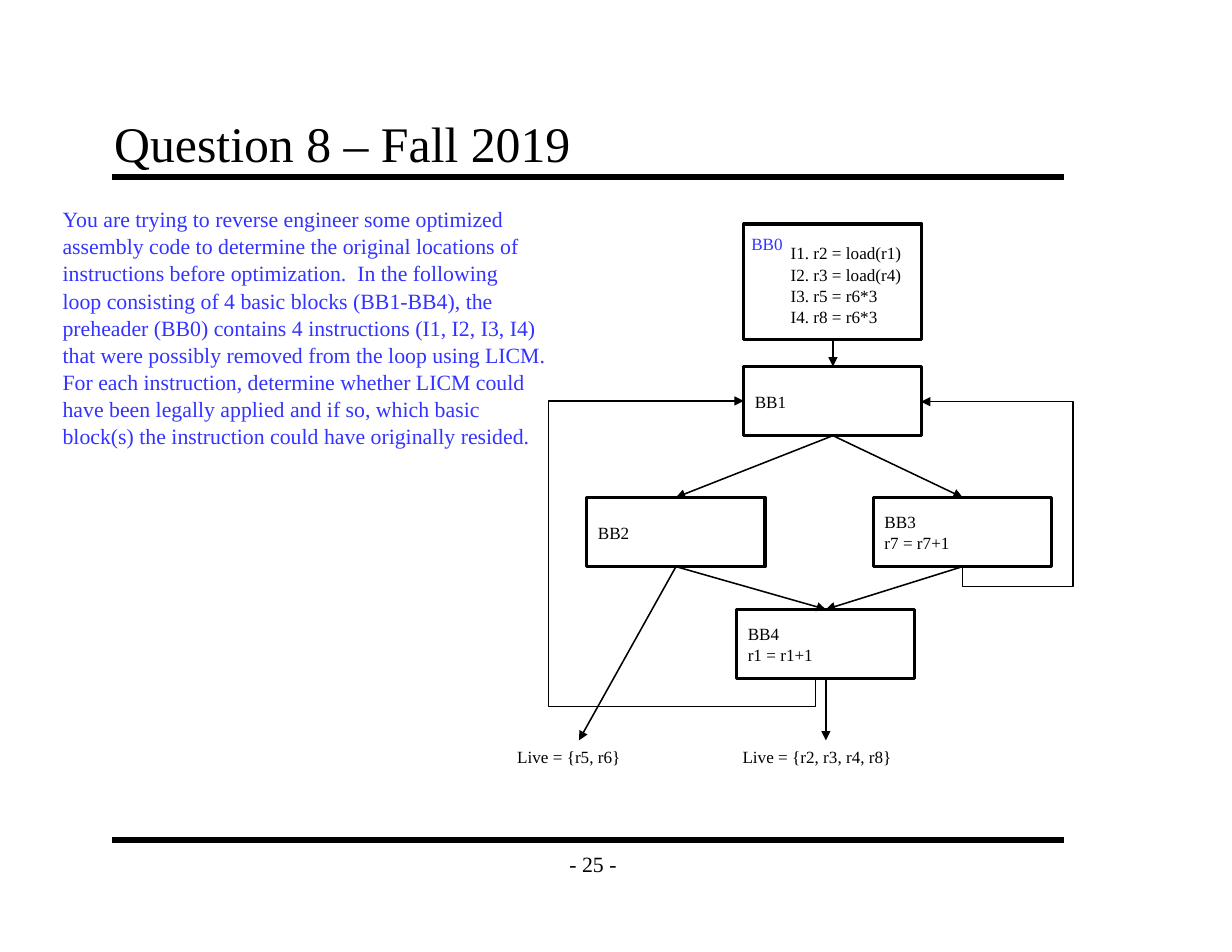
from lxml.etree import SubElement
from pptx import Presentation
from pptx.dml.color import RGBColor
from pptx.enum.shapes import MSO_CONNECTOR as LINK, MSO_SHAPE as SHAPE
from pptx.enum.text import MSO_ANCHOR as ANCHOR, PP_ALIGN as ALIGN
from pptx.oxml.ns import qn
from pptx.util import Cm, Pt

BLACK, BLUE = "000000", "3333FF"


def write(box, paragraphs, size=11, color=BLACK, anchor=ANCHOR.TOP, align=ALIGN.LEFT, wrap=True):
    frame = box.text_frame
    frame.word_wrap = wrap
    frame.vertical_anchor = anchor
    for index, text in enumerate(paragraphs):
        para = frame.add_paragraph() if index else frame.paragraphs[0]
        para.text = text
        para.alignment = align
        para.line_spacing = 1.04
        for span in para.runs:
            span.font.name = "Times New Roman"
            span.font.size = Pt(size)
            span.font.color.rgb = RGBColor.from_string(color)


def draw_line(kind, start, end, width=1, arrow=True):
    line = page.shapes.add_connector(kind, *map(Cm, start + end))
    line.line.color.rgb = RGBColor.from_string(BLACK)
    line.line.width = Pt(width)
    if arrow:
        SubElement(line.line._get_or_add_ln(), qn("a:tailEnd"), type="triangle")
    SubElement(line._element.spPr, qn("a:effectLst"))
    return line


deck = Presentation()
deck.slide_width, deck.slide_height = Cm(27.94), Cm(21.59)
page = deck.slides.add_slide(deck.slide_layouts[6])

for y in (4.01, 19.05):
    draw_line(LINK.STRAIGHT, (2.54, y), (24.13, y), 4, False)

blocks = {}
for name, left, top, height, paragraphs in (
    ("BB0", 16.87, 5.08, 2.62, []),
    ("BB1", 16.87, 8.31, 1.57, ["BB1"]),
    ("BB2", 13.31, 11.28, 1.57, ["BB2"]),
    ("BB3", 19.81, 11.28, 1.57, ["BB3", "r7 = r7+1"]),
    ("BB4", 16.71, 13.82, 1.57, ["BB4", "r1 = r1+1"]),
):
    block = page.shapes.add_shape(SHAPE.RECTANGLE, Cm(left), Cm(top), Cm(4.04), Cm(height))
    block.shadow.inherit = False
    block.fill.background()
    block.line.color.rgb = RGBColor.from_string(BLACK)
    block.line.width = Pt(2)
    write(block, paragraphs, anchor=ANCHOR.MIDDLE)
    blocks[name] = block

for source, target in (("BB0", "BB1"), ("BB1", "BB2"), ("BB1", "BB3"), ("BB2", "BB4"), ("BB3", "BB4")):
    edge = draw_line(LINK.STRAIGHT, (0, 0), (1, 1))
    edge.begin_connect(blocks[source], 2)
    edge.end_connect(blocks[target], 0)

for source, x in (("BB2", 13.13), ("BB4", 18.73)):
    leaving = draw_line(LINK.STRAIGHT, (0, 0), (x, 16.79))
    leaving.begin_connect(blocks[source], 2)

for left, top, width, height, angle, flip, bends in (
    (14.53, 11.43, 6.3, 1.63, 270, "flipV", (-10000, 371400)),
    (19.48, 10.52, 3.76, 0.94, 90, "flipH", (-11400, -266000)),
):
    back_edge = draw_line(LINK.ELBOW, (left, top), (left + width, top + height))
    frame = back_edge._element.spPr.find(qn("a:xfrm"))
    frame.set("rot", str(angle * 60000))
    frame.set(flip, "1")
    geometry = back_edge._element.spPr.find(qn("a:prstGeom"))
    geometry.set("prst", "bentConnector4")
    guides = geometry.find(qn("a:avLst"))
    if guides is None:
        guides = SubElement(geometry, qn("a:avLst"))
    for number, bend in enumerate(bends, 1):
        SubElement(guides, qn("a:gd"), name=f"adj{number}", fmla=f"val {bend}")

instructions = ["I1. r2 = load(r1)", "I2. r3 = load(r4)", "I3. r5 = r6*3", "I4. r8 = r6*3"]
for left, top, width, height, paragraphs, color in (
    (11.48, 16.79, 4.5, 1.12, ["Live = {r5, r6}"], BLACK),
    (16.59, 16.79, 5.36, 1.24, ["Live = {r2, r3, r4, r8}"], BLACK),
    (17.68, 5.36, 3.61, 3.02, instructions, BLACK),
    (16.79, 5.16, 1.91, 0.97, ["BB0"], BLUE),
):
    label = page.shapes.add_textbox(Cm(left), Cm(top), Cm(width), Cm(height))
    write(label, paragraphs, color=color)

title = page.shapes.add_textbox(Cm(2.34), Cm(2.34), Cm(21.59), Cm(1.7))
write(title, ["Question 8 – Fall 2019"], 32, anchor=ANCHOR.BOTTOM)

number_box = page.shapes.add_textbox(Cm(12.5), Cm(19.05), Cm(1.9), Cm(1.07))
write(number_box, ["- 25 -"], 14, anchor=ANCHOR.MIDDLE, align=ALIGN.CENTER, wrap=False)

question = """You are trying to reverse engineer some optimized
assembly code to determine the original locations of
instructions before optimization.  In the following
loop consisting of 4 basic blocks (BB1-BB4), the
preheader (BB0) contains 4 instructions (I1, I2, I3, I4)
that were possibly removed from the loop using LICM.
For each instruction, determine whether LICM could
have been legally applied and if so, which basic
block(s) the instruction could have originally resided."""
question_box = page.shapes.add_textbox(Cm(1.17), Cm(4.52), Cm(11.56), Cm(6.25))
write(question_box, [question], 14, BLUE, wrap=False)

deck.save("out.pptx")
